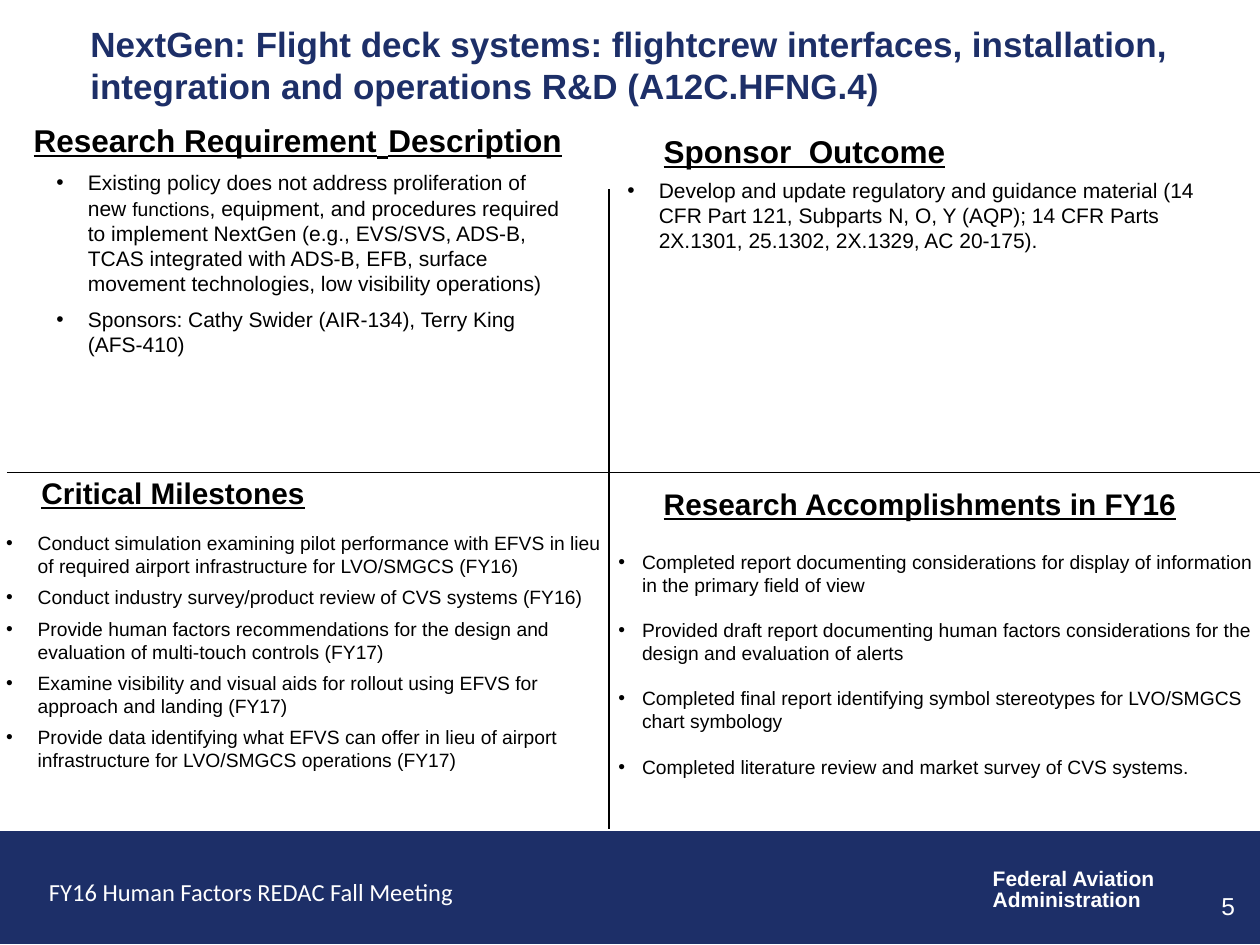
from lxml import etree
from pptx import Presentation
from pptx.dml.color import RGBColor
from pptx.enum.shapes import MSO_CONNECTOR, MSO_SHAPE
from pptx.enum.text import MSO_ANCHOR, PP_ALIGN
from pptx.oxml.ns import qn
from pptx.util import Pt

LEFT, RIGHT = PP_ALIGN.LEFT, PP_ALIGN.RIGHT
TOP = MSO_ANCHOR.TOP
RECTANGLE = MSO_SHAPE.RECTANGLE
STRAIGHT = MSO_CONNECTOR.STRAIGHT

COLORS = {"navy": "1D2F68", "black": "000000", "white": "FFFFFF"}
DIVIDER_X, DIVIDER_Y = 348, 270
BAR_TOP = 475.2

REQUIREMENTS = [
    ["Existing policy does not address proliferation of new ",
     ("functions", 11),
     ", equipment, and procedures required to implement NextGen (e.g., EVS/SVS, ADS-B, "
     "TCAS integrated with ADS-B, EFB, surface movement technologies, low visibility operations)"],
    "Sponsors: Cathy Swider (AIR-134), Terry King (AFS-410)",
]
OUTCOMES = [
    "Develop and update regulatory and guidance material (14 CFR Part 121, Subparts N, O, Y (AQP); "
    "14 CFR Parts 2X.1301, 25.1302, 2X.1329, AC 20-175).",
]
MILESTONES = [
    "Conduct simulation examining pilot performance with EFVS in lieu of required airport "
    "infrastructure for LVO/SMGCS (FY16)",
    "Conduct industry survey/product review of CVS systems (FY16)",
    "Provide human factors recommendations for the design and evaluation of multi-touch controls (FY17)",
    "Examine visibility and visual aids for rollout using EFVS for approach and landing (FY17)",
    "Provide data identifying what EFVS can offer in lieu of airport infrastructure for "
    "LVO/SMGCS operations (FY17)",
]
ACCOMPLISHMENTS = [
    "Completed report documenting considerations for display of information in the primary field of view",
    "Provided draft report documenting human factors considerations for the design and evaluation of alerts",
    "Completed final report identifying symbol stereotypes for LVO/SMGCS chart symbology",
    "Completed literature review and market survey of CVS systems.",
]


class QuadSlide:
    font = "Arial"

    def __init__(self, page):
        self.page = page

    def color(self, name):
        return RGBColor.from_string(COLORS[name])

    def bar(self, left, top, width, height, color):
        shape = self.page.shapes.add_shape(RECTANGLE, Pt(left), Pt(top), Pt(width), Pt(height))
        shape.shadow.inherit = False
        shape.fill.solid()
        shape.fill.fore_color.rgb = self.color(color)
        shape.line.color.rgb = self.color(color)
        shape.line.width = Pt(0.75)

    def rule(self, x1, y1, x2, y2):
        line = self.page.shapes.add_connector(STRAIGHT, Pt(x1), Pt(y1), Pt(x2), Pt(y2))
        line.line.color.rgb = self.color("black")
        line.line.width = Pt(0.75)
        etree.SubElement(line._element.spPr, qn("a:effectLst"))

    def text(self, place, paragraphs, size, color="black", bold=False, underline=False,
             font=None, align=LEFT, wrap=True, line_spacing=None, gap=0, indent=0, inset_top=3.6):
        """Add a text box; a paragraph is a string or a list of strings and (string, size) spans."""
        box = self.page.shapes.add_textbox(*map(Pt, place))
        frame = box.text_frame
        frame.word_wrap = wrap
        frame.vertical_anchor = TOP
        frame.margin_top = Pt(inset_top)
        for index, content in enumerate(paragraphs):
            para = frame.paragraphs[0] if index == 0 else frame.add_paragraph()
            para.alignment = align
            if line_spacing:
                para.line_spacing = line_spacing
            if index and gap:
                para.space_before = Pt(gap)
            if indent:
                self.bullet(para, indent)
            para.font.name = font or self.font
            para.font.size = Pt(size)
            para.font.bold = bold
            para.font.underline = underline
            para.font.color.rgb = self.color(color)
            self.fill_spans(para, [content] if isinstance(content, str) else content)

    def fill_spans(self, para, spans):
        for item in spans:
            span = para.add_run()
            if isinstance(item, str):
                span.text = item
            else:
                span.text = item[0]
                span.font.size = Pt(item[1])

    def bullet(self, para, indent):
        properties = para._p.get_or_add_pPr()
        properties.set("marL", str(Pt(indent)))
        properties.set("indent", str(-Pt(indent)))
        etree.SubElement(properties, qn("a:buFont"), typeface=self.font)
        etree.SubElement(properties, qn("a:buChar"), char="•")

    def heading(self, place, content, size):
        self.text(place, [content], size, bold=True, underline=True)

    def bullets(self, place, items, size, gap, indent=18, inset_top=3.6):
        self.text(place, items, size, gap=gap, indent=indent, inset_top=inset_top)


def main():
    deck = Presentation()
    deck.slide_width, deck.slide_height = Pt(720), Pt(540)
    slide = QuadSlide(deck.slides.add_slide(deck.slide_layouts[6]))

    slide.bar(0, BAR_TOP, 720, 64, "navy")
    slide.text((560.2, 493.2, 108, 31.7), ["Federal Aviation", "Administration"], 12,
               color="white", bold=True, wrap=False, line_spacing=0.85)
    slide.text((44.6, 9.4, 667.4, 50.4),
               ["NextGen: Flight deck systems: flightcrew interfaces, installation, "
                "integration and operations R&D (A12C.HFNG.4)"], 20, color="navy", bold=True)

    slide.heading((16.6, 267.8, 324, 27.4), "Critical Milestones", 17)
    slide.heading((372.2, 72, 336.2, 23.8), "Sponsor  Outcome", 18)
    slide.heading((12.2, 59.8, 360, 23.8),
                  ["Research Requirement", (" ", 24), "Description"], 18)
    slide.heading((372.2, 274.3, 318.2, 38.9), "Research Accomplishments in FY16", 17)

    slide.rule(DIVIDER_X, 108, DIVIDER_X, 474)
    slide.rule(4, DIVIDER_Y, 720, DIVIDER_Y)

    slide.bullets((25.2, 93.6, 304.6, 135.4), REQUIREMENTS, 12, gap=6)
    slide.bullets((-3.6, 290.9, 359.3, 169.9), MILESTONES, 11, gap=4.6, inset_top=12.8)
    slide.bullets((351.4, 97.9, 360, 51.1), OUTCOMES, 12, gap=6)
    slide.bullets((346.3, 298.1, 377.3, 154.1), ACCOMPLISHMENTS, 11, gap=12.6,
                  indent=13.5, inset_top=16.2)

    slide.text((545, 505.4, 167.8, 25.9), ["5"], 14, color="white", align=RIGHT)
    slide.text((20.9, 497.5, 247.7, 24.5), ["FY16 Human Factors REDAC Fall Meeting"], 14,
               color="white", font="Calibri", wrap=False)

    deck.save("out.pptx")


if __name__ == "__main__":
    main()
